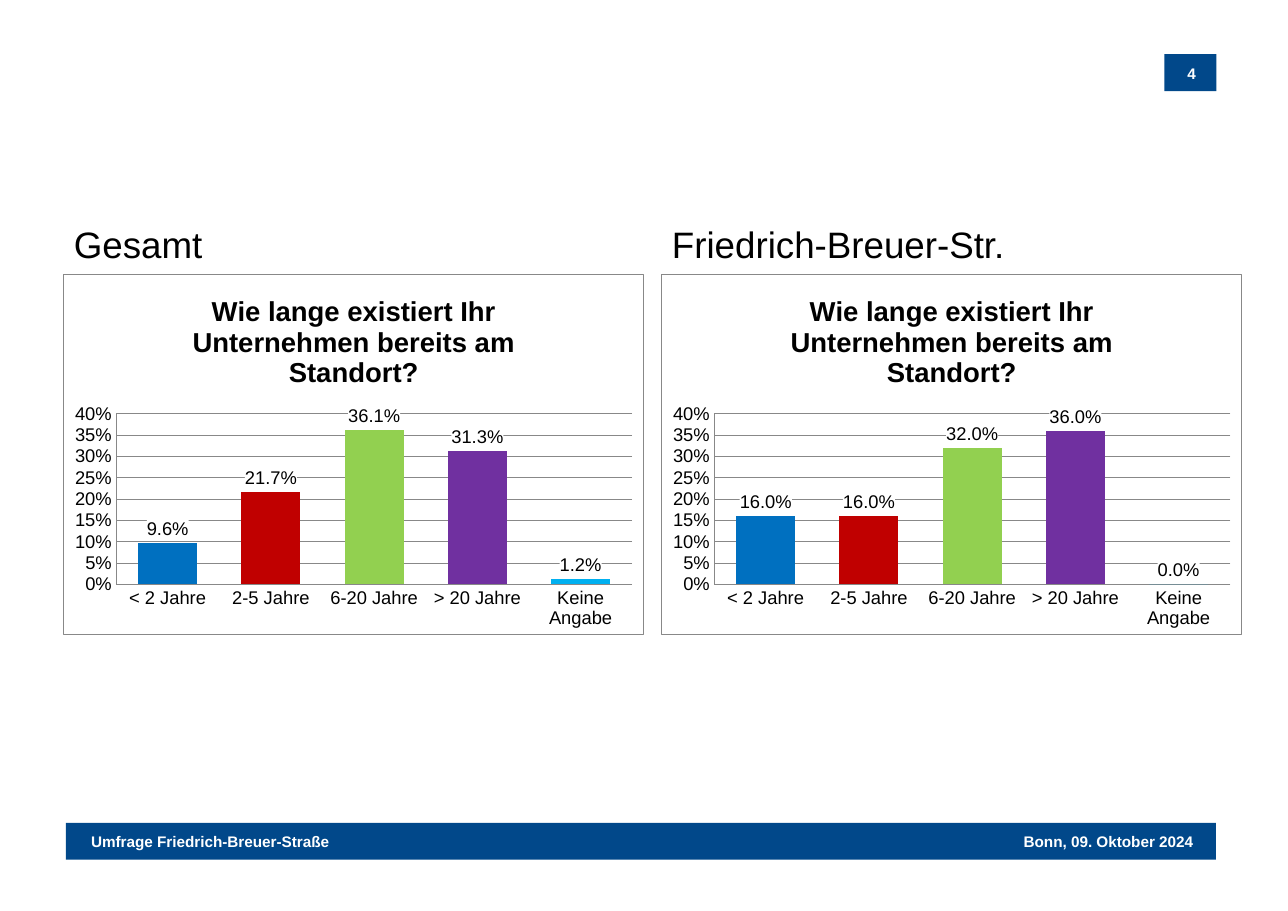
from lxml.etree import fromstring
from pptx import Presentation
from pptx.chart.data import CategoryChartData as ChartData
from pptx.dml.color import RGBColor as RGB
from pptx.enum.chart import XL_CHART_TYPE as Kind, XL_LABEL_POSITION as Spot
from pptx.enum.chart import XL_TICK_MARK as Tick
from pptx.enum.shapes import MSO_SHAPE as Form
from pptx.enum.text import MSO_ANCHOR as Anchor, MSO_AUTO_SIZE as Fit
from pptx.enum.text import PP_ALIGN as Align
from pptx.oxml.ns import nsdecls, qn
from pptx.util import Cm, Pt

HUES = {"navy": "01488A", "white": "FFFFFF", "black": "000000", "gray": "888888"}
BARS = {"< 2 Jahre": "0070C0", "2-5 Jahre": "C00000", "6-20 Jahre": "92D050",
        "> 20 Jahre": "7030A0", "Keine Angabe": "00B0F0"}
ASK = "Wie lange existiert Ihr Unternehmen bereits am Standort?"
PARTS = [("Gesamt", 1, 1.45, (0.096, 0.217, 0.361, 0.313, 0.012)),
         ("Friedrich-Breuer-Str.", 3, 15.24, (0.16, 0.16, 0.32, 0.36, 0))]


def style(font, size, hue="black", bold=False):
    """Set face, size, colour and weight of a font."""
    font.name, font.size, font.bold = "Arial", Pt(size), bold
    font.color.rgb = RGB.from_string(HUES[hue])


def rule(line):
    """Give a line the thin gray look."""
    line.color.rgb = RGB.from_string(HUES["gray"])
    line.width = Pt(0.75)


def skin(edge=False):
    """Return white chart shape properties, with a gray edge if asked."""
    fill = '<a:solidFill><a:srgbClr val="{}"/></a:solidFill>'
    line = f'<a:ln w="9525">{fill.format(HUES["gray"])}</a:ln>' if edge else ""
    return fromstring(f'<c:spPr {nsdecls("c", "a")}>'
                      f'{fill.format(HUES["white"])}{line}</c:spPr>')


def band(slide, x, y, w, h):
    """Draw a navy bar."""
    bar = slide.shapes.add_shape(Form.RECTANGLE, Cm(x), Cm(y), Cm(w), Cm(h))
    bar.shadow.inherit = False
    bar.fill.solid()
    bar.fill.fore_color.rgb = RGB.from_string(HUES["navy"])
    bar.line.fill.background()


def label(slide, text, x, y, w, align):
    """Write a small white line of text."""
    box = slide.shapes.add_textbox(Cm(x), Cm(y), Cm(w), Cm(0.69))
    box.text_frame.word_wrap = True
    para = box.text_frame.paragraphs[0]
    para.text, para.alignment = text, align
    style(para.font, 10, "white", True)


def badge(slide, x, y, w, h):
    """Place the page number on its bar."""
    band(slide, x, y, w, h)
    label(slide, "4", x, y + 0.1, w + 0.05, Align.CENTER)


def footer(slide, x, y, w, h):
    """Place the foot bar with topic and date."""
    band(slide, x, y, w, h)
    label(slide, "Umfrage Friedrich-Breuer-Straße", x + 0.33, y + 0.08, 9, Align.LEFT)
    label(slide, "Bonn, 09. Oktober 2024", x + w - 9.28, y + 0.08, 9, Align.RIGHT)


def heading(slide, slot, text, x, y, w, h):
    """Fill a body placeholder with the head of a column."""
    head = slide.placeholders[slot]
    head.left, head.top, head.width, head.height = Cm(x), Cm(y), Cm(w), Cm(h)
    frame = head.text_frame
    frame.text = text
    frame.vertical_anchor, frame.auto_size = Anchor.TOP, Fit.NONE
    para = frame.paragraphs[0]
    para.space_before, para.line_spacing = Pt(0), 1.0
    style(para.font, 24)


def axes(chart):
    """Format both axes and the grid."""
    for axis in (chart.category_axis, chart.value_axis):
        axis.major_tick_mark = axis.minor_tick_mark = Tick.NONE
        style(axis.tick_labels.font, 12)
        rule(axis.format.line)
    axis.minimum_scale, axis.maximum_scale, axis.major_unit = 0, 0.4, 0.05
    axis.tick_labels.number_format = "0%"
    axis.tick_labels.number_format_is_linked = False
    rule(axis.major_gridlines.format.line)


def columns(plot):
    """Colour the columns and show their values."""
    plot.gap_width, plot.vary_by_categories = 75, False
    series = plot.series[0]
    for spot, hue in enumerate(BARS.values()):
        fill = series.points[spot].format.fill
        fill.solid()
        fill.fore_color.rgb = RGB.from_string(hue)
    tags = series.data_labels
    tags.show_value, tags.position = True, Spot.OUTSIDE_END
    tags.number_format, tags.number_format_is_linked = "0.0%", False
    style(tags.font, 12)
    series.format.fill.solid()
    series.format.fill.fore_color.rgb = RGB.from_string("BBE0E3")
    for text in plot.chart_tags if hasattr(plot, "chart_tags") else [tags.font]:
        style(text, 12)


def graph(slide, vals, x, y, w, h):
    """Add the column chart of one survey group."""
    data = ChartData(number_format="0.0%")
    data.categories = list(BARS)
    data.add_series("Series 1", vals)
    chart = slide.shapes.add_chart(Kind.COLUMN_CLUSTERED, Cm(x), Cm(y),
                                   Cm(w), Cm(h), data).chart
    style(chart.font, 10)
    chart.has_legend = False
    para = chart.chart_title.text_frame.paragraphs[0]
    para.text = ASK
    style(para.font, 18, bold=True)
    chart.chart_title.include_in_layout = False
    axes(chart)
    columns(chart.plots[0])
    root = chart.element
    root.find(qn("c:txPr")).addprevious(skin(edge=True))
    root.find(".//" + qn("c:plotArea")).append(skin())
    root.find(".//" + qn("c:ser")).find(qn("c:dLbls")).find(
        qn("c:numFmt")).addnext(skin())


def main():
    """Build the slide and save it."""
    deck = Presentation()
    deck.slide_width, deck.slide_height = Cm(29.7), Cm(21)
    slide = deck.slides.add_slide(deck.slide_layouts[4])
    badge(slide, 26.85, 1.25, 1.2, 0.85)
    footer(slide, 1.52, 18.97, 26.52, 0.85)
    for text, slot, x, vals in PARTS:
        heading(slide, slot, text, x, 4.98, 9, 1.27)
        graph(slide, vals, x, 6.32, 13.41, 8.33)
    for hold in list(slide.placeholders):
        if not hold.has_text_frame or not hold.text_frame.text:
            hold.element.getparent().remove(hold.element)
    deck.save("out.pptx")


if __name__ == "__main__":
    main()
